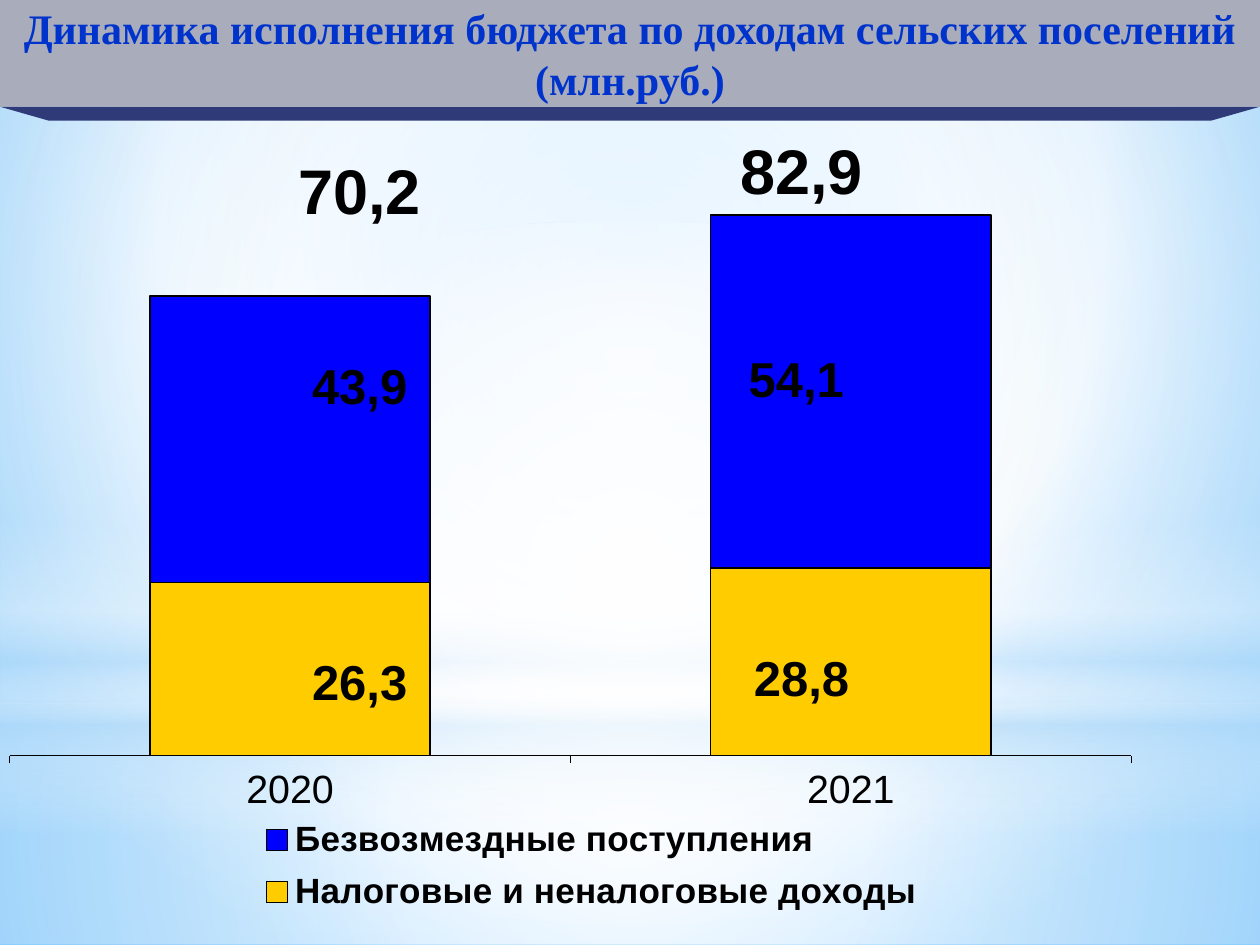
import lxml.etree
import pptx
import pptx.chart.data
import pptx.dml.color
import pptx.enum.chart
import pptx.enum.shapes
import pptx.enum.text
import pptx.oxml.ns
import pptx.util

Pt = pptx.util.Pt
qn = pptx.oxml.ns.qn
SHAPES = pptx.enum.shapes.MSO_SHAPE

COLORS = {
    "white": "FFFFFF", "haze": "B4DCFA", "sky": "9ED5FF", "deep_sky": "5BB9FF",
    "banner": "A9ACBA", "bevel": "2F3B78", "title": "0033CC", "black": "000000",
    "tax": "FFCC00", "grants": "0000FF",
}
WIDTH, HEIGHT = 720, 540
CENTER = (50, 50, 50, 50)


def color(name):
    return pptx.dml.color.RGBColor.from_string(COLORS[name])


def set_gradient(fill, element, stops, focus=None, angle=0):
    fill.gradient()
    gradient = element.find(".//" + qn("a:gradFill"))
    gradient.clear()
    stop_list = lxml.etree.SubElement(gradient, qn("a:gsLst"))
    for position, name, opacity in stops:
        stop = lxml.etree.SubElement(stop_list, qn("a:gs"), pos=str(position * 1000))
        value = lxml.etree.SubElement(stop, qn("a:srgbClr"), val=COLORS[name])
        if opacity < 100:
            lxml.etree.SubElement(value, qn("a:alpha"), val=str(opacity * 1000))
    if focus:
        circle = lxml.etree.SubElement(gradient, qn("a:path"), path="circle")
        sides = {side: str(part * 1000) for side, part in zip("ltrb", focus)}
        lxml.etree.SubElement(circle, qn("a:fillToRect"), **sides)
    else:
        lxml.etree.SubElement(gradient, qn("a:lin"), ang=str(angle * 60000), scaled="0")


def add_glow(slide, kind, top, height, stops, **direction):
    shape = slide.shapes.add_shape(kind, 0, Pt(top), Pt(WIDTH), Pt(height))
    shape.shadow.inherit = False
    shape.line.fill.background()
    set_gradient(shape.fill, shape._element, stops, **direction)


def add_background(slide):
    set_gradient(slide.background.fill, slide._element,
                 [(0, "sky", 100), (60, "white", 100), (100, "deep_sky", 100)],
                 focus=(20, 10, 20, 60))
    add_glow(slide, SHAPES.RECTANGLE, 402, 138,
             [(0, "white", 91), (37, "white", 76), (100, "haze", 79)], focus=CENTER)
    add_glow(slide, SHAPES.RECTANGLE, 0, 402,
             [(0, "white", 89), (48, "white", 62), (100, "haze", 79)], focus=CENTER)
    add_glow(slide, SHAPES.RECTANGLE, 297, 180,
             [(0, "white", 0), (29, "white", 30), (45, "haze", 40),
              (55, "white", 26), (65, "haze", 60), (100, "white", 0)], angle=90)
    add_glow(slide, SHAPES.OVAL, 126, 402,
             [(0, "white", 100), (56, "white", 0)], focus=CENTER)


def set_font(font, size, name="Arial", tint="black", bold=True):
    font.size, font.name, font.bold = Pt(size), name, bold
    font.color.rgb = color(tint)


def write_text(shape, text, **style):
    frame = shape.text_frame
    frame.word_wrap = False
    frame.vertical_anchor = pptx.enum.text.MSO_ANCHOR.MIDDLE
    for index, line in enumerate(text.split("\n")):
        paragraph = frame.paragraphs[0] if index == 0 else frame.add_paragraph()
        paragraph.alignment = pptx.enum.text.PP_ALIGN.CENTER
        run = paragraph.add_run()
        run.text = line
        set_font(run.font, **style)


def add_label(slide, text, center_x, center_y, size):
    width, height = 110, 52
    box = slide.shapes.add_textbox(Pt(center_x - width / 2), Pt(center_y - height / 2),
                                   Pt(width), Pt(height))
    write_text(box, text, size=size)


def fill_plain(shape, name):
    shape.shadow.inherit = False
    shape.fill.solid()
    shape.fill.fore_color.rgb = color(name)
    shape.line.fill.background()


def add_banner(slide):
    bottom, bevel_bottom, inset = 61, 69, 28
    builder = slide.shapes.build_freeform(0, Pt(bottom))
    builder.add_line_segments([(Pt(WIDTH), Pt(bottom)),
                               (Pt(WIDTH - inset), Pt(bevel_bottom)),
                               (Pt(inset), Pt(bevel_bottom))])
    fill_plain(builder.convert_to_shape(), "bevel")
    banner = slide.shapes.add_shape(SHAPES.RECTANGLE, 0, 0, Pt(WIDTH), Pt(bottom))
    fill_plain(banner, "banner")
    write_text(banner, "Динамика исполнения бюджета по доходам сельских поселений\n(млн.руб.)",
               size=24, name="Times New Roman", tint="title")


def set_layout(parent, x, y, w, h, inner=False):
    for old in parent.findall(qn("c:layout")):
        parent.remove(old)
    layout = lxml.etree.Element(qn("c:layout"))
    manual = lxml.etree.SubElement(layout, qn("c:manualLayout"))
    settings = {"layoutTarget": "inner"} if inner else {}
    settings.update(xMode="edge", yMode="edge", x=x, y=y, w=w, h=h)
    for tag, value in settings.items():
        lxml.etree.SubElement(manual, qn("c:" + tag), val=str(value))
    parent.insert(0 if inner else 1, layout)


def add_budget_chart(slide):
    data = pptx.chart.data.CategoryChartData()
    data.categories = ["2020", "2021"]
    data.add_series("Налоговые и неналоговые доходы", (49, 53))
    data.add_series("Безвозмездные поступления", (81, 100))
    chart = slide.shapes.add_chart(pptx.enum.chart.XL_CHART_TYPE.COLUMN_STACKED,
                                   Pt(3.6), Pt(81.4), Pt(656), Pt(447), data).chart
    set_font(chart.font, 23.7, name="Calibri")
    chart.has_title = False
    plot = chart.plots[0]
    plot.gap_width, plot.overlap, plot.vary_by_categories = 100, 100, False
    for series, name in zip(plot.series, ("tax", "grants")):
        series.format.fill.solid()
        series.format.fill.fore_color.rgb = color(name)
        series.format.line.color.rgb = color("black")
        series.format.line.width = Pt(0.96)
    values = chart.value_axis
    values.minimum_scale, values.maximum_scale = 0, 166
    values.has_major_gridlines = values.visible = False
    years = chart.category_axis
    years.major_tick_mark = pptx.enum.chart.XL_TICK_MARK.OUTSIDE
    years.format.line.color.rgb = color("black")
    years.format.line.width = Pt(0.25)
    set_font(years.tick_labels.font, 22.5, bold=False)
    chart.has_legend = True
    legend = chart.legend
    legend.position = pptx.enum.chart.XL_LEGEND_POSITION.RIGHT
    legend.include_in_layout = False
    set_font(legend.font, 20)
    set_layout(legend._element, 0.21, 0.85, 0.6, 0.15)
    set_layout(plot._element.getparent(), 0.003, 0.034, 0.977, 0.75, inner=True)


def main():
    presentation = pptx.Presentation()
    presentation.slide_width, presentation.slide_height = Pt(WIDTH), Pt(HEIGHT)
    slide = presentation.slides.add_slide(presentation.slide_layouts[6])
    add_background(slide)
    add_budget_chart(slide)
    add_banner(slide)
    for text, center_x, center_y, size in [
        ("43,9", 205.5, 220, 28), ("26,3", 205.5, 389, 28), ("70,2", 205.5, 108, 36),
        ("54,1", 455, 216, 28), ("28,8", 458, 387, 28), ("82,9", 458, 97, 36),
    ]:
        add_label(slide, text, center_x, center_y, size)
    presentation.save("out.pptx")


if __name__ == "__main__":
    main()
